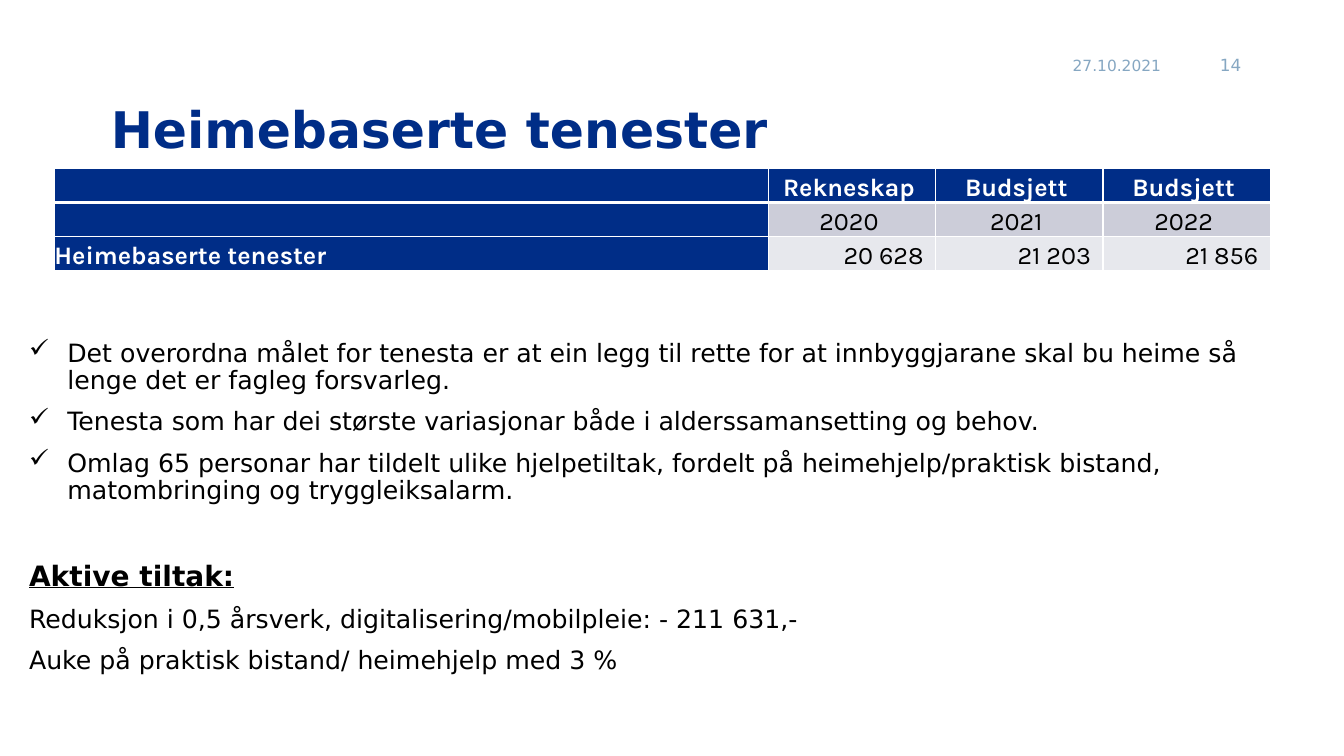
from lxml.etree import SubElement
from pptx import Presentation
from pptx.dml.color import RGBColor
from pptx.enum.text import MSO_ANCHOR, PP_ALIGN
from pptx.oxml.ns import qn
from pptx.util import Inches, Pt

COLORS = {
    "navy": "002D87",
    "pale_blue": "86A7C2",
    "band_dark": "CCCDD9",
    "band_light": "E7E8ED",
    "black": "000000",
    "white": "FFFFFF",
}
BODY_FONT, TABLE_FONT = "DejaVu Sans", "Karla"

BUDGET_ROWS = [
    ["", "Rekneskap", "Budsjett", "Budsjett"],
    ["", "2020", "2021", "2022"],
    ["Heimebaserte tenester", "20 628", "21 203", "21 856"],
]
GOALS = [
    "Det overordna målet for tenesta er at ein legg til rette for at "
    "innbyggjarane skal bu heime så lenge det er fagleg forsvarleg.",
    "Tenesta som har dei største variasjonar både i alderssamansetting og behov.",
    "Omlag 65 personar har tildelt ulike hjelpetiltak, fordelt på "
    "heimehjelp/praktisk bistand, matombringing og tryggleiksalarm.",
]
MEASURES = [
    "Reduksjon i 0,5 årsverk, digitalisering/mobilpleie: - 211 631,-",
    "Auke på praktisk bistand/ heimehjelp med 3 %",
]


def set_font(paragraph, size, color, bold=False, name=BODY_FONT):
    font = paragraph.font
    font.name, font.size, font.bold = name, Pt(size), bold
    font.color.rgb = RGBColor.from_string(COLORS[color])


def add_text_frame(slide, box, anchor=MSO_ANCHOR.TOP):
    frame = slide.shapes.add_textbox(*map(Inches, box)).text_frame
    frame.word_wrap = True
    frame.vertical_anchor = anchor
    return frame


def add_line(slide, box, text, size, color, bold=False, align=PP_ALIGN.LEFT):
    """One vertically centred line of text."""
    line = add_text_frame(slide, box, MSO_ANCHOR.MIDDLE).paragraphs[0]
    line.text = text
    line.alignment = align
    line.line_spacing = 0.9
    set_font(line, size, color, bold)


def add_header(slide, box):
    """Date and page number, at the two ends of the box."""
    left, top, width, height = box
    number_width = 0.57
    add_line(slide, (left, top, 1.15, height), "27.10.2021", 11, "pale_blue")
    add_line(slide, (left + width - number_width, top, number_width, height),
             "14", 12, "pale_blue", align=PP_ALIGN.RIGHT)


def set_borders(cell, widths):
    properties = cell._tc.get_or_add_tcPr()
    for side, width in widths.items():
        border = SubElement(properties, qn(f"a:ln{side}"), w=str(Pt(width)))
        fill = SubElement(border, qn("a:solidFill"))
        SubElement(fill, qn("a:srgbClr"), val=COLORS["white"])


def add_budget_table(slide, box):
    left, top, width, height = box
    row_count, column_count = len(BUDGET_ROWS), len(BUDGET_ROWS[0])
    table = slide.shapes.add_table(row_count, column_count,
                                   *map(Inches, box)).table
    year_width = 1.66
    label_width = width - year_width * (column_count - 1)
    for index, column in enumerate(table.columns):
        column.width = Inches(year_width if index else label_width)
    for row in table.rows:
        row.height = Inches(height / row_count)

    bands = ["navy", "band_dark", "band_light"]
    for row, texts in enumerate(BUDGET_ROWS):
        for column, text in enumerate(texts):
            cell = table.cell(row, column)
            heading = row == 0 or column == 0
            number = row == 2 and column > 0
            set_borders(cell, {"L": 1, "R": 1, "T": 3 if row == 1 else 1,
                               "B": 3 if row == 0 else 1})
            cell.fill.solid()
            cell.fill.fore_color.rgb = RGBColor.from_string(
                COLORS["navy" if heading else bands[row]])
            cell.vertical_anchor = MSO_ANCHOR.BOTTOM
            cell.margin_left = cell.margin_top = cell.margin_bottom = 0
            cell.margin_right = Inches(0.12 if number else 0.06)
            entry = cell.text_frame.paragraphs[0]
            entry.text = text
            entry.line_spacing = 1.07
            if column:
                entry.alignment = PP_ALIGN.RIGHT if number else PP_ALIGN.CENTER
            set_font(entry, 18, "white" if heading else "black", heading, TABLE_FONT)


def add_check_mark(paragraph):
    properties = paragraph._p.get_or_add_pPr()
    properties.set("marL", str(Inches(0.38)))
    properties.set("indent", str(-Inches(0.38)))
    SubElement(properties, qn("a:buChar"), char="✓")


def add_body(slide, box):
    """Check-marked goals, then the active measures under a heading."""
    frame = add_text_frame(slide, box)
    heading = "Aktive tiltak:"
    for index, text in enumerate([*GOALS, heading, *MEASURES]):
        paragraph = frame.paragraphs[0] if index == 0 else frame.add_paragraph()
        paragraph.text = text
        paragraph.line_spacing = 0.9
        if index:
            paragraph.space_before = Pt(41 if text == heading else 10)
        if text in GOALS:
            add_check_mark(paragraph)
        set_font(paragraph, 20 if text == heading else 18, "black", text == heading)
        if text == heading:
            paragraph.font.underline = True


def main():
    deck = Presentation()
    deck.slide_width, deck.slide_height = Inches(13.33), Inches(7.5)
    slide = deck.slides.add_slide(deck.slide_layouts[6])
    add_header(slide, (10.54, 0.46, 1.87, 0.4))
    add_line(slide, (1, 0.86, 11.42, 0.9), "Heimebaserte tenester", 36, "navy", True)
    add_body(slide, (0.19, 3.33, 12.83, 3.71))
    add_budget_table(slide, (0.54, 1.67, 12.06, 1.02))
    deck.save("out.pptx")


if __name__ == "__main__":
    main()
